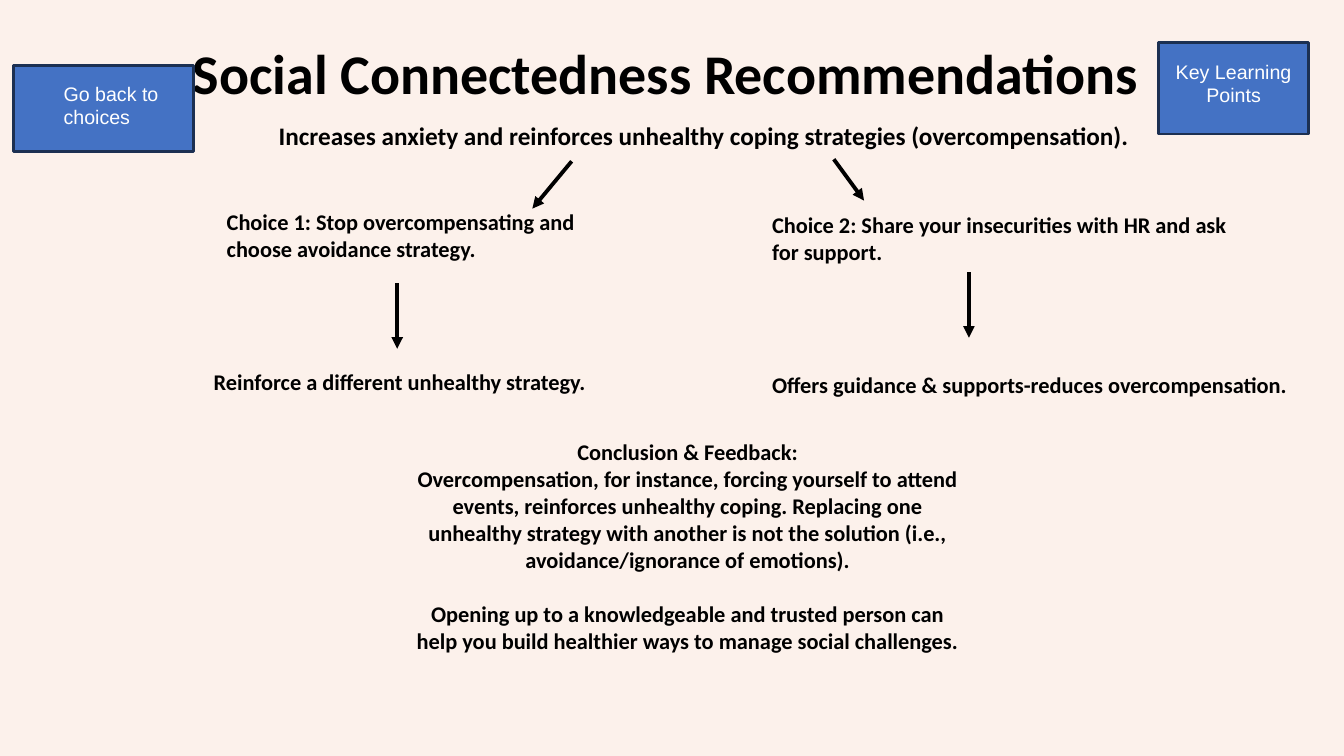
from lxml import etree
from pptx import Presentation
from pptx.dml.color import RGBColor
from pptx.enum.shapes import MSO_CONNECTOR as CONNECTOR, MSO_SHAPE as SHAPE
from pptx.enum.text import MSO_ANCHOR as ANCHOR, PP_ALIGN as ALIGN
from pptx.oxml.ns import qn
from pptx.util import Inches, Pt

BACKGROUND = RGBColor(0xFC, 0xF1, 0xEB)
BLACK = RGBColor(0, 0, 0)
WHITE = RGBColor(255, 255, 255)
BUTTON_FILL = RGBColor(0x44, 0x72, 0xC4)
BUTTON_LINE = RGBColor(0x1C, 0x30, 0x52)


def style(para, size, font, color, bold, align):
    para.alignment = align
    for span in para.runs:
        span.font.size = Pt(size)
        span.font.name = font
        span.font.color.rgb = color
        span.font.bold = bold


def add_text(page, left, top, width, height, text, size=16, align=ALIGN.LEFT):
    box = page.shapes.add_textbox(Inches(left), Inches(top), Inches(width), Inches(height))
    frame = box.text_frame
    frame.word_wrap = True
    frame.text = text
    for para in frame.paragraphs:
        style(para, size, "Calibri", BLACK, True, align)
    return frame.paragraphs


def add_arrow(page, x1, y1, x2, y2):
    arrow = page.shapes.add_connector(
        CONNECTOR.STRAIGHT, Inches(x1), Inches(y1), Inches(x2), Inches(y2))
    arrow.line.color.rgb = BLACK
    arrow.line.width = Pt(2.75)
    etree.SubElement(arrow.line._get_or_add_ln(), qn("a:tailEnd"), type="triangle")
    etree.SubElement(arrow._element.spPr, qn("a:effectLst"))


def add_button(page, left, top, width, height, text, align, inset_left, inset_top, inset_right):
    button = page.shapes.add_shape(
        SHAPE.RECTANGLE, Inches(left), Inches(top), Inches(width), Inches(height))
    button.shadow.inherit = False
    button.fill.solid()
    button.fill.fore_color.rgb = BUTTON_FILL
    button.line.color.rgb = BUTTON_LINE
    button.line.width = Pt(2)
    frame = button.text_frame
    frame.word_wrap = True
    frame.vertical_anchor = ANCHOR.TOP
    frame.margin_left = Inches(inset_left)
    frame.margin_top = Inches(inset_top)
    frame.margin_right = Inches(inset_right)
    frame.text = text
    style(frame.paragraphs[0], 14, "Arial", WHITE, False, align)


def add_heading(page, left, top):
    title = add_text(page, left, top, 13.2, 1.11,
                     "Social Connectedness Recommendations", 40, ALIGN.CENTER)
    title[0].line_spacing = 1.5
    add_text(page, left + 1.34, top + 1.14, 11.28, 0.4,
             "Increases anxiety and reinforces unhealthy coping strategies (overcompensation).",
             18, ALIGN.CENTER)


def add_branch(page, left, top, width, choice, outcome, outcome_left, arrow_x, arrow_top):
    add_text(page, left, top, width, 0.64, choice)
    add_arrow(page, arrow_x, arrow_top, arrow_x, arrow_top + 0.65)
    add_text(page, outcome_left, top + 1.58, 5.5, 0.37, outcome)


def add_conclusion(page, left, top, width, height):
    paras = add_text(
        page, left, top, width, height,
        "Conclusion & Feedback:\n"
        "Overcompensation, for instance, forcing yourself to attend events, reinforces "
        "unhealthy coping. Replacing one unhealthy strategy with another is not the "
        "solution (i.e., avoidance/ignorance of emotions).\n"
        "Opening up to a knowledgeable and trusted person can help you build healthier "
        "ways to manage social challenges.", align=ALIGN.CENTER)
    paras[-1].space_before = Pt(19.5)


def main():
    deck = Presentation()
    deck.slide_width, deck.slide_height = Inches(13.33), Inches(7.5)
    page = deck.slides.add_slide(deck.slide_layouts[6])
    page.background.fill.solid()
    page.background.fill.fore_color.rgb = BACKGROUND

    add_heading(page, 0, 0)
    add_arrow(page, 5.67, 1.6, 5.28, 2.07)
    add_arrow(page, 8.27, 1.58, 8.57, 1.99)
    add_branch(page, 2.15, 2.02, 4.29,
               "Choice 1: Stop overcompensating and choose avoidance strategy.",
               "Reinforce a different unhealthy strategy.", 2.02, 3.94, 2.81)
    add_branch(page, 7.56, 2.05, 4.83,
               "Choice 2: Share your insecurities with HR and ask for support.",
               "Offers guidance & supports-reduces overcompensation.", 7.56, 9.61, 2.7)
    add_conclusion(page, 4.03, 4.3, 5.58, 2.52)
    add_button(page, 11.49, 0.42, 1.49, 0.91, "Key Learning Points", ALIGN.CENTER, 0.1, 0.17, 0.1)
    add_button(page, 0.13, 0.65, 1.79, 0.85, "Go back to choices", ALIGN.LEFT, 0.5, 0.16, 0.19)
    deck.save("out.pptx")


if __name__ == "__main__":
    main()
